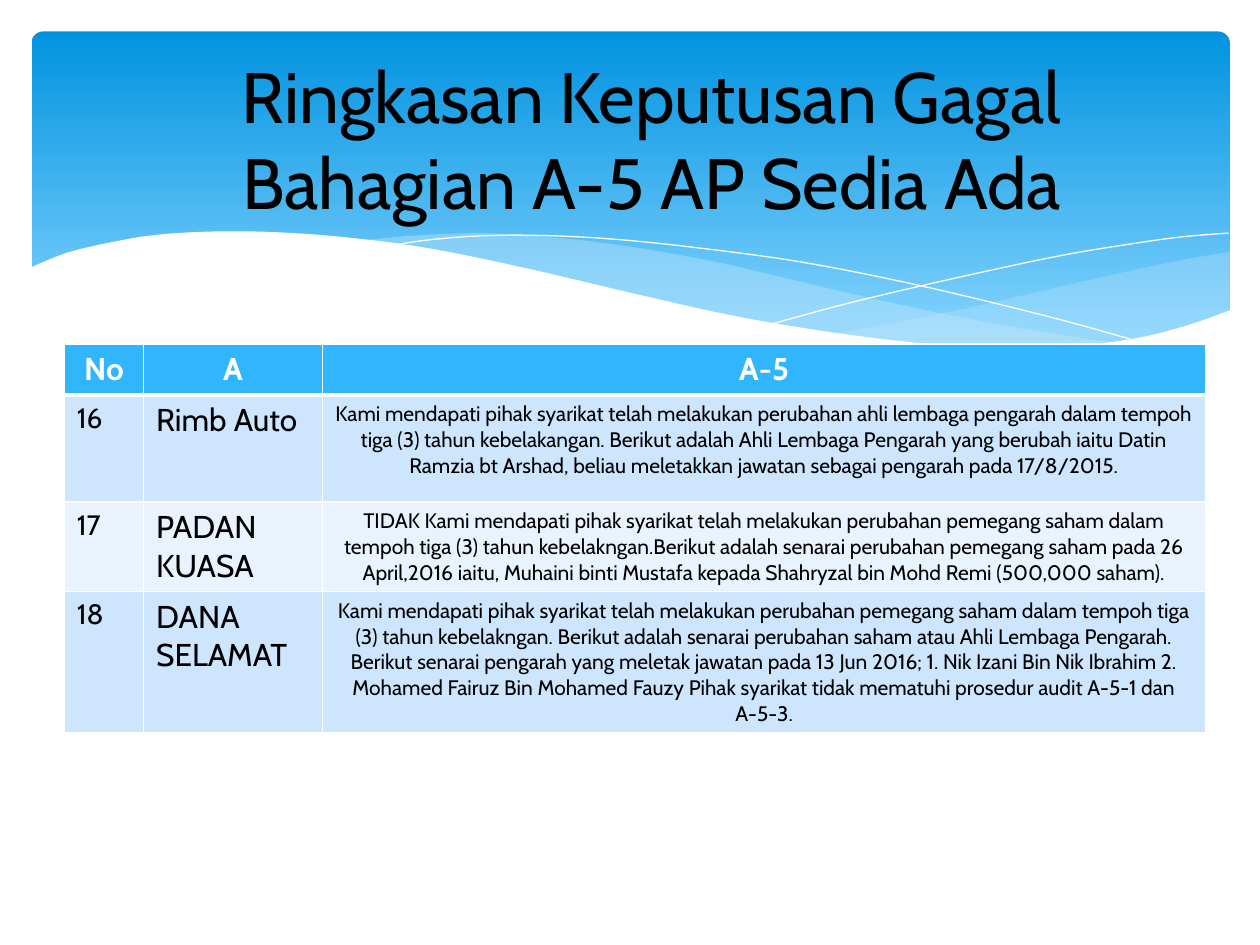
from lxml import etree
from pptx import Presentation
from pptx.dml.color import RGBColor
from pptx.enum.shapes import MSO_SHAPE
from pptx.enum.text import MSO_ANCHOR, MSO_AUTO_SIZE, PP_ALIGN
from pptx.oxml.ns import qn
from pptx.util import Inches, Pt

ROUNDED = MSO_SHAPE.ROUNDED_RECTANGLE
CENTER, LEFT = PP_ALIGN.CENTER, PP_ALIGN.LEFT
FONT = "Cabin"
WHITE, BLACK = "FFFFFF", "000000"
HEADER_FILL = "31B6FD"
BAND_FILLS = ["CEE5FE", "E8F3FF"]
STEPS = 5

TITLE = ["Ringkasan Keputusan Gagal", "Bahagian A-5 AP Sedia Ada"]
HEADERS = ["No", "A", "A-5"]
FINDINGS = [
    ("16", "Rimb Auto",
     "Kami mendapati pihak syarikat telah melakukan perubahan ahli lembaga pengarah dalam tempoh "
     "tiga (3) tahun kebelakangan. Berikut adalah Ahli Lembaga Pengarah yang berubah iaitu Datin "
     "Ramzia bt Arshad, beliau meletakkan jawatan sebagai pengarah pada 17/8/2015."),
    ("17", "PADAN KUASA",
     "TIDAK Kami mendapati pihak syarikat telah melakukan perubahan pemegang saham dalam tempoh "
     "tiga (3) tahun kebelakngan.Berikut adalah senarai perubahan pemegang saham pada 26 "
     "April,2016 iaitu, Muhaini binti Mustafa kepada Shahryzal bin Mohd Remi (500,000 saham)."),
    ("18", "DANA SELAMAT",
     "Kami mendapati pihak syarikat telah melakukan perubahan pemegang saham dalam tempoh tiga "
     "(3) tahun kebelakngan. Berikut adalah senarai perubahan saham atau Ahli Lembaga Pengarah. "
     "Berikut senarai pengarah yang meletak jawatan pada 13 Jun 2016; 1. Nik Izani Bin Nik "
     "Ibrahim 2. Mohamed Fairuz Bin Mohamed Fauzy Pihak syarikat tidak mematuhi prosedur audit "
     "A-5-1 dan A-5-3."),
]
COLUMN_WIDTHS = [0.63, 1.42, 7.01]
ROW_HEIGHTS = [0.38, 0.85, 0.66, 0.6]
COLUMN_FORMATS = [(16, LEFT), (18, LEFT), (12, CENTER)]

WAVES = [
    {"fill": "C6E7FC", "opacity": 29, "edges": [
        [(9.76, 2), (9.35, 2.07), (8.61, 2.23), (7.79, 2.42), (7.06, 2.57), (6.61, 2.65)],
        [(6.61, 2.65), (7.19, 2.72), (7.69, 2.77), (8.14, 2.78), (8.63, 2.75), (9.05, 2.69),
         (9.42, 2.59), (9.76, 2.47)]]},
    {"fill": "C6E7FC", "opacity": 40, "edges": [
        [(8.93, 2.73), (8.37, 2.65), (7.75, 2.54), (7.06, 2.4), (6.29, 2.22), (5.69, 2.08),
         (5.14, 1.98), (4.65, 1.91), (4.2, 1.87), (3.8, 1.85), (3.28, 1.87), (2.86, 1.91)],
        [(2.86, 1.91), (3.42, 1.99), (4.04, 2.11), (4.91, 2.32), (5.66, 2.48), (6.34, 2.61),
         (6.95, 2.7), (7.48, 2.76), (7.96, 2.78), (8.48, 2.77), (8.93, 2.73)]]},
    {"edges": [
        [(3.09, 1.95), (3.44, 1.9), (3.87, 1.87), (4.33, 1.87), (4.89, 1.9), (5.56, 1.97),
         (6.36, 2.08), (7.27, 2.26), (8.31, 2.51), (9.07, 2.72)]]},
    {"edges": [
        [(6.13, 2.57), (6.72, 2.41), (7.48, 2.23), (8.36, 2.04), (8.95, 1.94), (9.38, 1.88),
         (9.75, 1.85)]]},
    {"fill": WHITE, "opacity": 100, "edges": [
        [(9.77, 2.46), (9.4, 2.59), (8.99, 2.69), (8.5, 2.75), (8.09, 2.77), (7.61, 2.75),
         (7.08, 2.7), (6.48, 2.62), (5.79, 2.5), (5.03, 2.33), (4.18, 2.13), (3.4, 1.97),
         (2.71, 1.88), (2.11, 1.84), (1.61, 1.84), (1.19, 1.87), (0.85, 1.93), (0.52, 2.01),
         (0.23, 2.13)],
        [(0.23, 3.29), (9.77, 3.29)]]},
]


def color(value):
    return RGBColor.from_string(value)


def smooth(points):
    padded = [points[0], *points, points[-1]]
    curve = [points[0]]
    for a, b, c, d in zip(padded, padded[1:], padded[2:], padded[3:]):
        for step in range(1, STEPS + 1):
            t = step / STEPS
            curve.append(tuple(
                q + t * ((r - p) + t * ((2 * p - 5 * q + 4 * r - s)
                                        + t * (3 * q - p - 3 * r + s))) / 2
                for p, q, r, s in zip(a, b, c, d)))
    return curve


def add_wave(shapes, wave):
    points = [(Inches(x), Inches(y)) for edge in wave["edges"] for x, y in smooth(edge)]
    builder = shapes.build_freeform(*points[0])
    builder.add_line_segments(points[1:], close="fill" in wave)
    outline = builder.convert_to_shape()
    outline.shadow.inherit = False
    if "fill" in wave:
        outline.fill.solid()
        outline.fill.fore_color.rgb = color(wave["fill"])
        outline.line.fill.background()
        tint = outline.fill._xPr.find(qn("a:solidFill"))[0]
        etree.SubElement(tint, qn("a:alpha"), val=str(wave["opacity"] * 1000))
    else:
        outline.fill.background()
        outline.line.color.rgb = color(WHITE)
        outline.line.width = Pt(0)


def write(paragraph, text, align, size, ink, bold=False):
    paragraph.alignment = align
    run = paragraph.add_run()
    run.text = text
    run.font.color.rgb = color(ink)
    for attribute, value in {"name": FONT, "size": Pt(size), "bold": bold}.items():
        setattr(run.font, attribute, value)


def add_borders(cell, widths):
    properties = cell._tc.get_or_add_tcPr()
    for side, width in widths.items():
        border = etree.SubElement(properties, qn(f"a:ln{side}"), w=str(Pt(width)))
        ink = etree.SubElement(border, qn("a:solidFill"))
        etree.SubElement(ink, qn("a:srgbClr"), val=WHITE)


def add_banner(shapes):
    banner = shapes.add_shape(ROUNDED, Inches(0.25), Inches(0.25), Inches(9.51), Inches(2.7))
    banner.adjustments[0] = 0.034
    banner.shadow.inherit = False
    banner.line.fill.background()
    banner.fill.gradient()
    banner.fill.gradient_angle = 270
    stops = [(0, "0293E0"), (0.9, "83D3FE")]
    for stop, (position, tint) in zip(banner.fill.gradient_stops, stops):
        stop.position = position
        stop.color.rgb = color(tint)


def format_title(title):
    place = {"left": 0.67, "top": 0.47, "width": 9, "height": 1.25}
    for attribute, value in place.items():
        setattr(title, attribute, Inches(value))
    frame = title.text_frame
    settings = {"word_wrap": True, "auto_size": MSO_AUTO_SIZE.NONE,
                "vertical_anchor": MSO_ANCHOR.MIDDLE}
    for attribute, value in settings.items():
        setattr(frame, attribute, value)
    for index, line in enumerate(TITLE):
        paragraph = frame.add_paragraph() if index else frame.paragraphs[0]
        paragraph.space_before = Pt(0)
        write(paragraph, line, CENTER, 40.7, BLACK)


def add_findings(shapes):
    rows = [HEADERS, *FINDINGS]
    table = shapes.add_table(len(rows), len(HEADERS), Inches(0.51), Inches(2.73),
                             Inches(sum(COLUMN_WIDTHS)), Inches(sum(ROW_HEIGHTS))).table
    for column, width in zip(table.columns, COLUMN_WIDTHS):
        column.width = Inches(width)
    for row, height in zip(table.rows, ROW_HEIGHTS):
        row.height = Inches(height)
    for r, row in enumerate(rows):
        for c, text in enumerate(row):
            cell = table.cell(r, c)
            add_borders(cell, {"L": 1, "R": 1, "T": 3 if r == 1 else 1, "B": 1 if r else 3})
            cell.fill.solid()
            cell.fill.fore_color.rgb = color(BAND_FILLS[(r - 1) % 2] if r else HEADER_FILL)
            size, align = COLUMN_FORMATS[c] if r else (18, CENTER)
            write(cell.text_frame.paragraphs[0], text, align, size,
                  BLACK if r else WHITE, bold=r == 0)


def main():
    deck = Presentation()
    deck.slide_width, deck.slide_height = Inches(10), Inches(7.5)
    slide = deck.slides.add_slide(deck.slide_layouts[5])
    add_banner(slide.shapes)
    for wave in WAVES:
        add_wave(slide.shapes, wave)
    title = slide.shapes.title
    format_title(title)
    title._element.getparent().append(title._element)
    add_findings(slide.shapes)
    deck.save("out.pptx")


if __name__ == "__main__":
    main()
